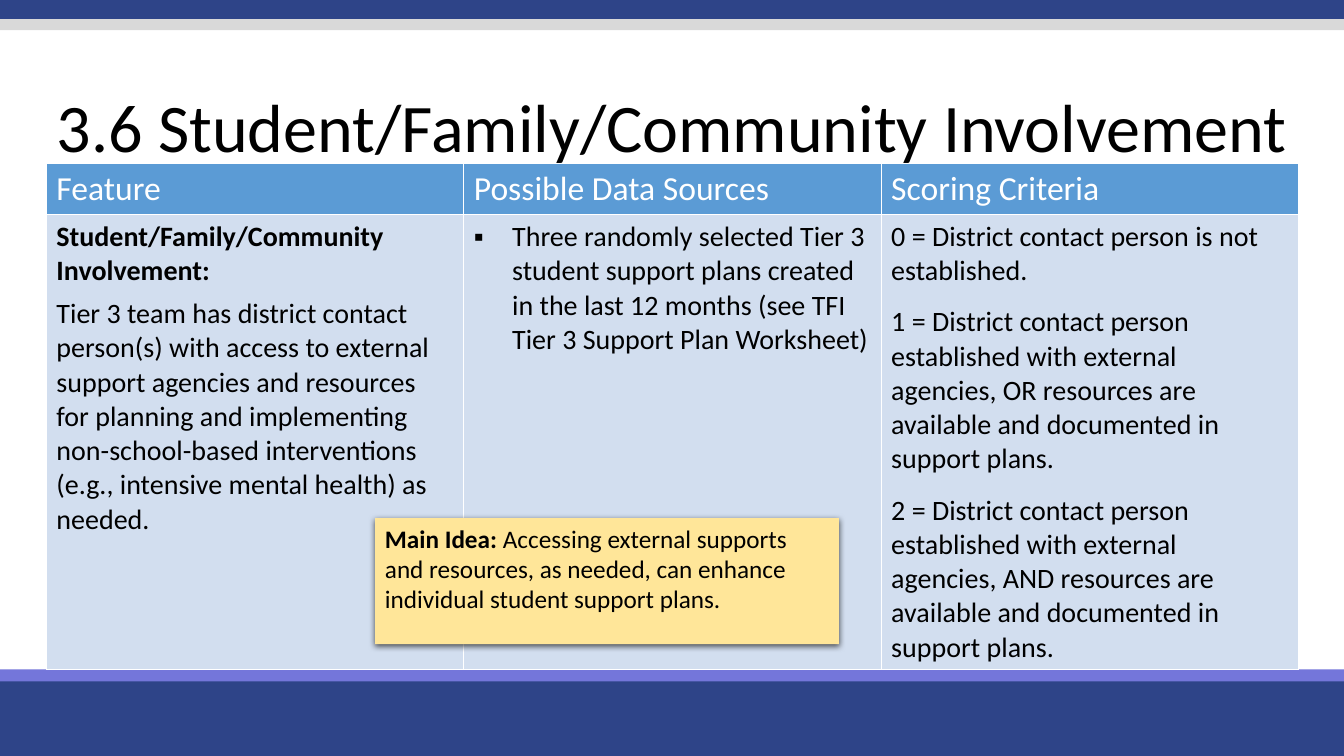
"""Build the slide on student, family and community involvement."""
import pptx
import pptx.dml.color
import pptx.enum.shapes
import pptx.enum.text
import pptx.oxml
import pptx.oxml.ns
import pptx.util

RGBColor = pptx.dml.color.RGBColor
NAVY = RGBColor(0x2E, 0x44, 0x88)
GREY = RGBColor(0xD9, 0xD9, 0xD9)
VIOLET = RGBColor(0x74, 0x76, 0xDA)
HEADER_BLUE = RGBColor(0x5B, 0x9B, 0xD5)
BODY_BLUE = RGBColor(0xD2, 0xDE, 0xEF)
YELLOW = RGBColor(0xFF, 0xE6, 0x99)
BLACK = RGBColor(0, 0, 0)
WHITE = RGBColor(0xFF, 0xFF, 0xFF)

FONT = "Calibri"
GRID_STEP = pptx.util.Inches(0.01)
COLUMNS, ROWS = 1333, 750
HEADER_ROWS = 51

BANDS = [
    ((0, 0, COLUMNS, 19), NAVY),
    ((0, 19, COLUMNS, 11), GREY),
    ((0, 670, COLUMNS, 80), NAVY),
    ((0, 664, COLUMNS, 12), VIOLET),
]
HEADERS = ["Feature", "Possible Data Sources", "Scoring Criteria"]
FEATURE = [
    "Student/Family/Community Involvement:",
    "Tier 3 team has district contact person(s) with access to external support "
    "agencies and resources for planning and implementing non-school-based "
    "interventions (e.g., intensive mental health) as needed.",
]
SOURCES = [
    "Three randomly selected Tier 3 student support plans created in the last "
    "12 months (see TFI Tier 3 Support Plan Worksheet)",
]
CRITERIA = [
    "0 = District contact person is not established.",
    "1 = District contact person established with external agencies, OR resources "
    "are available and documented in support plans.",
    "2 = District contact person established with external agencies, AND resources "
    "are available and documented in support plans.",
]
MAIN_IDEA = [
    ("Main Idea: ", True),
    ("Accessing external supports and resources, as needed, can enhance "
     "individual student support plans.", False),
]


def place(box):
    """Turn a box of grid columns and rows into slide lengths."""
    return [value * GRID_STEP for value in box]


def add_xml(parent, xml, index=None):
    """Parse a DrawingML element and put it into its parent."""
    tag, rest = xml.split(" ", 1)
    namespace = pptx.oxml.ns.nsdecls("a")
    element = pptx.oxml.parse_xml(f"{tag} {namespace} {rest}")
    parent.insert(len(parent) if index is None else index, element)


def style_run(run, size, color, bold=False):
    """Format one run."""
    run.font.name = FONT
    run.font.size = pptx.util.Pt(size)
    run.font.bold = bold
    run.font.color.rgb = color


def add_block(slide, box, color):
    """Add a plain filled rectangle."""
    shape = slide.shapes.add_shape(
        pptx.enum.shapes.MSO_SHAPE.RECTANGLE, *place(box))
    shape.shadow.inherit = False
    shape.fill.solid()
    shape.fill.fore_color.rgb = color
    shape.line.fill.background()
    return shape


def add_title(slide, box, text):
    """Add the centred slide title."""
    text_frame = slide.shapes.add_textbox(*place(box)).text_frame
    text_frame.word_wrap = True
    text_frame.vertical_anchor = pptx.enum.text.MSO_ANCHOR.MIDDLE
    text_frame.text = text
    paragraph = text_frame.paragraphs[0]
    paragraph.alignment = pptx.enum.text.PP_ALIGN.CENTER
    paragraph.line_spacing = 0.9
    style_run(paragraph.runs[0], 48.6, BLACK)


def fill_cell(cell, lines, size, color, background):
    """Write paragraphs into a cell and set its fill and white borders."""
    cell.text_frame.text = "\n".join(lines)
    for paragraph in cell.text_frame.paragraphs:
        style_run(paragraph.runs[0], size, color)
    cell.fill.solid()
    cell.fill.fore_color.rgb = background
    properties = cell._tc.get_or_add_tcPr()
    for index, side in enumerate("LRTB"):
        add_xml(properties, f'<a:ln{side} w="12700"><a:solidFill>'
                f'<a:srgbClr val="{WHITE}"/></a:solidFill></a:ln{side}>', index)


def add_bullet(paragraph):
    """Give a paragraph a square bullet with a hanging indent."""
    properties = paragraph._p.get_or_add_pPr()
    properties.set("marL", str(pptx.util.Inches(0.38)))
    properties.set("indent", str(-pptx.util.Inches(0.38)))
    add_xml(properties, '<a:buFont typeface="Arial"/>')
    add_xml(properties, '<a:buChar char="▪"/>')


def add_feature_table(slide, box):
    """Add the table of feature, data sources and scoring criteria."""
    table = slide.shapes.add_table(2, len(HEADERS), *place(box)).table
    table.rows[0].height = HEADER_ROWS * GRID_STEP
    table.rows[1].height = (box[3] - HEADER_ROWS) * GRID_STEP
    for column, lines in enumerate([FEATURE, SOURCES, CRITERIA]):
        header = table.cell(0, column)
        fill_cell(header, [HEADERS[column]], 24, WHITE, HEADER_BLUE)
        header.vertical_anchor = pptx.enum.text.MSO_ANCHOR.MIDDLE
        fill_cell(table.cell(1, column), lines, 20, BLACK, BODY_BLUE)
    feature, sources, criteria = (
        cell.text_frame.paragraphs for cell in table.rows[1].cells)
    feature[0].runs[0].font.bold = True
    feature[1].space_before = pptx.util.Pt(6)
    add_bullet(sources[0])
    for paragraph in criteria[:-1]:
        paragraph.space_after = pptx.util.Pt(12)


def add_main_idea(slide, box):
    """Add the yellow callout with its soft shadow."""
    shape = add_block(slide, box, YELLOW)
    effects = shape._element.spPr.find(pptx.oxml.ns.qn("a:effectLst"))
    add_xml(effects, '<a:outerShdw blurRad="57150" dist="19050" dir="5400000" '
            f'algn="ctr" rotWithShape="0"><a:srgbClr val="{BLACK}">'
            '<a:alpha val="63000"/></a:srgbClr></a:outerShdw>')
    text_frame = shape.text_frame
    text_frame.word_wrap = True
    text_frame.vertical_anchor = pptx.enum.text.MSO_ANCHOR.TOP
    paragraph = text_frame.paragraphs[0]
    paragraph.alignment = pptx.enum.text.PP_ALIGN.LEFT
    for text, bold in MAIN_IDEA:
        run = paragraph.add_run()
        run.text = text
        style_run(run, 18, BLACK, bold)


def main():
    """Build and save the presentation."""
    presentation = pptx.Presentation()
    presentation.slide_width = COLUMNS * GRID_STEP
    presentation.slide_height = ROWS * GRID_STEP
    slide = presentation.slides.add_slide(presentation.slide_layouts[6])
    for box, color in BANDS:
        add_block(slide, box, color)
    add_title(slide, (0, 69, COLUMNS, 121), "3.6 Student/Family/Community Involvement")
    add_feature_table(slide, (46, 162, 1242, 502))
    add_main_idea(slide, (372, 514, 460, 125))
    presentation.save("out.pptx")


if __name__ == "__main__":
    main()
